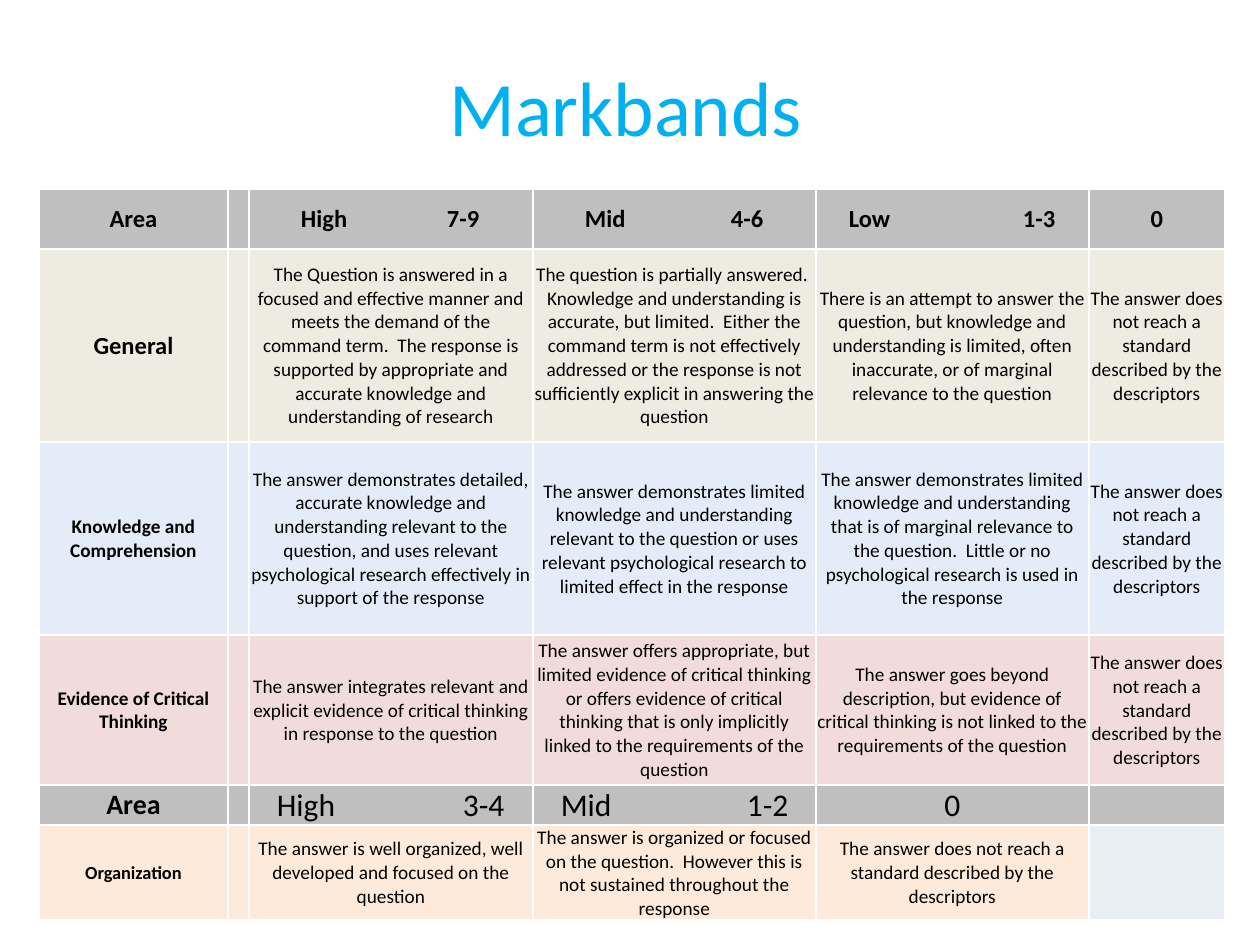
"""Builds the Markbands slide: a title above a table of assessment criteria."""
from pptx import Presentation
from pptx.dml.color import RGBColor
from pptx.enum.text import MSO_ANCHOR as Anchor, PP_ALIGN as Align
from pptx.oxml.ns import qn
from pptx.util import Emu, Pt
from lxml.etree import SubElement

PX = 914400 // 126
FONT = "Calibri"
SKY = RGBColor(0x00, 0xB0, 0xF0)
BLACK = RGBColor(0x00, 0x00, 0x00)
WHITE = RGBColor(0xFF, 0xFF, 0xFF)
GREY = RGBColor(0xBF, 0xBF, 0xBF)
SAND = RGBColor(0xEE, 0xEC, 0xE1)
BLUE = RGBColor(0xE3, 0xEC, 0xF8)
PINK = RGBColor(0xF2, 0xDC, 0xDB)
PEACH = RGBColor(0xFD, 0xEA, 0xDA)
PALE = RGBColor(0xE9, 0xED, 0xF4)

TITLE = "Markbands"
TITLE_BOX = (0, 32, 1184, 147)
TITLE_INDENT = 80
TABLE_LEFT, TABLE_TOP = 39, 189
COLUMN_WIDTHS = [189, 21, 284, 283, 273, 136]
NO_STANDARD = "The answer does not reach a standard described by the descriptors"

WIDE_GAP = (28, 186)
MID_GAP = (52, 146)
LOW_GAP = (33, 174)

ROWS = [
    {"height": 60, "fill": GREY, "label": ("Area", 14), "size": 14, "bold": True,
     "bands": [("High\t7-9", MID_GAP), ("Mid\t4-6", MID_GAP), ("Low\t1-3", LOW_GAP), "0"]},
    {"height": 193, "fill": SAND, "label": ("General", 14), "size": 11, "bold": False,
     "bands": [
         "The Question is answered in a focused and effective manner and meets the demand of the "
         "command term.  The response is supported by appropriate and accurate knowledge and "
         "understanding of research",
         "The question is partially answered.  Knowledge and understanding is accurate, but "
         "limited.  Either the command term is not effectively addressed or the response is not "
         "sufficiently explicit in answering the question",
         "There is an attempt to answer the question, but knowledge and understanding is limited, "
         "often inaccurate, or of marginal relevance to the question",
         NO_STANDARD]},
    {"height": 193, "fill": BLUE, "label": ("Knowledge and Comprehension", 11), "size": 11, "bold": False,
     "bands": [
         "The answer demonstrates detailed, accurate knowledge and understanding relevant to the "
         "question, and uses relevant psychological research effectively in support of the response",
         "The answer demonstrates limited knowledge and understanding relevant to the question or "
         "uses relevant psychological research to limited effect in the response",
         "The answer demonstrates limited knowledge and understanding that is of marginal relevance "
         "to the question.  Little or no psychological research is used in the response",
         NO_STANDARD]},
    {"height": 150, "fill": PINK, "label": ("Evidence of Critical Thinking", 11), "size": 11, "bold": False,
     "bands": [
         "The answer integrates relevant and explicit evidence of critical thinking in response to "
         "the question",
         "The answer offers appropriate, but limited evidence of critical thinking or offers evidence "
         "of critical thinking that is only implicitly linked to the requirements of the question",
         "The answer goes beyond description, but evidence of critical thinking is not linked to the "
         "requirements of the question",
         NO_STANDARD]},
    {"height": 40, "fill": GREY, "label": ("Area", 16), "size": 18, "bold": False,
     "bands": [("High\t3-4", WIDE_GAP), ("Mid\t1-2", WIDE_GAP), "0", ""]},
    {"height": 95, "fill": PEACH, "label": ("Organization", 10.5), "size": 11, "bold": False,
     "last_fill": PALE,
     "bands": [
         "The answer is well organized, well developed and focused on the question",
         "The answer is organized or focused on the question.  However this is not sustained "
         "throughout the response",
         NO_STANDARD, ""]},
]


def px(value):
    return Emu(value * PX)


def set_all(target, values):
    for name, value in values.items():
        setattr(target, name, value)


def write(paragraph, text, size, bold, color):
    paragraph.alignment = Align.CENTER
    font = paragraph.font
    if text:
        run = paragraph.add_run()
        run.text = text
        font = run.font
    set_all(font, {"name": FONT, "size": Pt(size), "bold": bold})
    font.color.rgb = color


def add_borders(cell):
    properties = cell._tc.get_or_add_tcPr()
    for side in ("a:lnL", "a:lnR", "a:lnT", "a:lnB"):
        line = SubElement(properties, qn(side), w=str(Pt(1)))
        solid = SubElement(line, qn("a:solidFill"))
        SubElement(solid, qn("a:srgbClr"), val=str(WHITE))


def fill_cell(cell, content, size, bold, fill):
    text, gap = content if isinstance(content, tuple) else (content, None)
    add_borders(cell)
    cell.fill.solid()
    cell.fill.fore_color.rgb = fill
    set_all(cell, {"vertical_anchor": Anchor.MIDDLE, "margin_left": px(1), "margin_right": px(1),
                   "margin_top": px(1), "margin_bottom": 0})
    paragraph = cell.text_frame.paragraphs[0]
    write(paragraph, text, size, bold, BLACK)
    if gap:
        indent, stop = gap
        cell.margin_left = px(indent)
        paragraph.alignment = Align.LEFT
        tabs = SubElement(paragraph._p.get_or_add_pPr(), qn("a:tabLst"))
        SubElement(tabs, qn("a:tab"), pos=str(px(stop)), algn="l")


def add_title(slide):
    frame = slide.shapes.add_textbox(*map(px, TITLE_BOX)).text_frame
    set_all(frame, {"word_wrap": True, "vertical_anchor": Anchor.MIDDLE, "margin_left": px(TITLE_INDENT)})
    write(frame.paragraphs[0], TITLE, 44, False, SKY)


def add_markbands(slide):
    height = sum(row["height"] for row in ROWS)
    box = (TABLE_LEFT, TABLE_TOP, sum(COLUMN_WIDTHS), height)
    table = slide.shapes.add_table(len(ROWS), len(COLUMN_WIDTHS), *map(px, box)).table
    set_all(table, {"first_row": False, "horz_banding": False})
    for column, width in zip(table.columns, COLUMN_WIDTHS):
        column.width = px(width)
    for table_row, row in zip(table.rows, ROWS):
        table_row.height = px(row["height"])
        label, label_size = row["label"]
        styles = [(label, label_size, True), ("", 11, False)]
        styles += [(band, row["size"], row["bold"]) for band in row["bands"]]
        fills = [row["fill"]] * 5 + [row.get("last_fill", row["fill"])]
        for cell, style, fill in zip(table_row.cells, styles, fills):
            fill_cell(cell, *style, fill)


def main():
    presentation = Presentation()
    set_all(presentation, {"slide_width": px(1260), "slide_height": px(945)})
    slide = presentation.slides.add_slide(presentation.slide_layouts[6])
    add_title(slide)
    add_markbands(slide)
    presentation.save("out.pptx")


if __name__ == "__main__":
    main()
